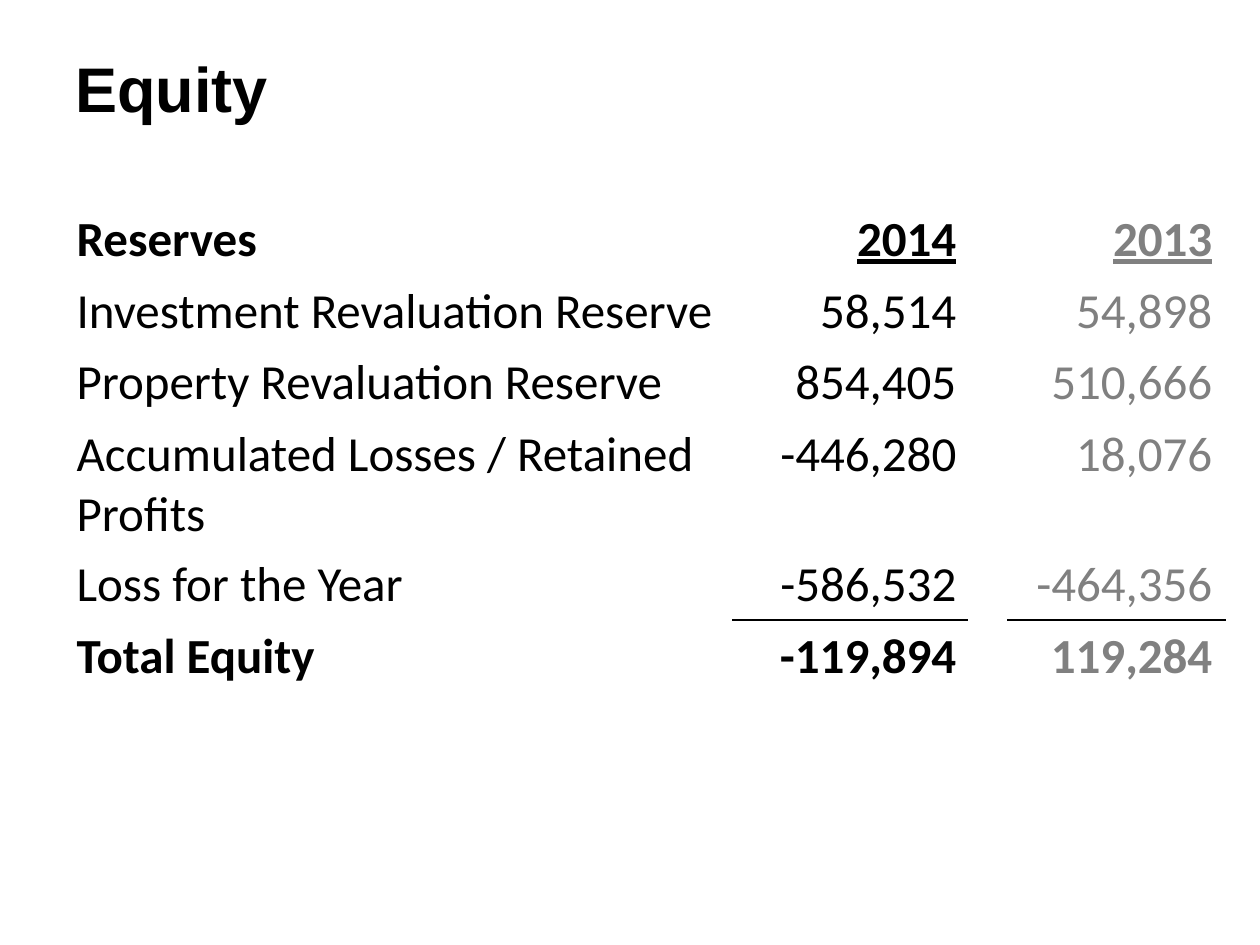
import pptx
import pptx.dml.color
import pptx.enum.text
import pptx.oxml
import pptx.oxml.ns
import pptx.util

PX = 914400 // 126
COLORS = {"ink": "000000", "muted": "808080"}
COLUMN_WIDTHS = [669, 236, 39, 217]
ROW_HEIGHT = 66
ROWS = [
    ("Reserves", "2014", "2013"),
    ("Investment Revaluation Reserve", "58,514", "54,898"),
    ("Property Revaluation Reserve", "854,405", "510,666"),
    ("Accumulated Losses / Retained Profits", "-446,280", "18,076"),
    ("Loss for the Year", "-586,532", "-464,356"),
    ("Total Equity", "-119,894", "119,284"),
]


def to_emu(*lengths):
    return [pptx.util.Emu(length * PX) for length in lengths]


def style_font(font, name, size, color, bold=False, underline=False):
    font.name = name
    font.size = pptx.util.Pt(size)
    font.bold = bold
    font.underline = underline
    font.color.rgb = pptx.dml.color.RGBColor.from_string(COLORS[color])


def add_border(cell, side):
    namespace = pptx.oxml.ns.nsdecls("a")
    border = pptx.oxml.parse_xml(
        f'<a:ln{side} {namespace} w="{pptx.util.Pt(1)}"><a:solidFill>'
        f'<a:srgbClr val="{COLORS["ink"]}"/></a:solidFill></a:ln{side}>'
    )
    cell._tc.get_or_add_tcPr().insert(0, border)


def add_title(slide, left, top, width, height):
    text_frame = slide.shapes.add_textbox(*to_emu(left, top, width, height)).text_frame
    text_frame.word_wrap = True
    text_frame.vertical_anchor = pptx.enum.text.MSO_ANCHOR.MIDDLE
    text_frame.text = "Equity"
    style_font(text_frame.paragraphs[0].runs[0].font, "Arial", 36, "ink", bold=True)


def fill_cell(cell, text, color, align_right, bold, underline):
    cell.text = text
    paragraph = cell.text_frame.paragraphs[0]
    if align_right:
        paragraph.alignment = pptx.enum.text.PP_ALIGN.RIGHT
    style_font(paragraph.runs[0].font, "Calibri", 28, color, bold, underline)


def add_reserves_table(slide, left, top):
    box = to_emu(left, top, sum(COLUMN_WIDTHS), ROW_HEIGHT * len(ROWS))
    table = slide.shapes.add_table(len(ROWS), len(COLUMN_WIDTHS), *box).table
    table.first_row = False
    table.horz_banding = False
    for column, width in zip(table.columns, to_emu(*COLUMN_WIDTHS)):
        column.width = width
    for cell in table.iter_cells():
        cell.fill.background()

    total_row = len(ROWS) - 1
    for row, (label, current, previous) in enumerate(ROWS):
        bold = row in (0, total_row)
        fill_cell(table.cell(row, 0), label, "ink", False, bold, False)
        for column, value, color in ((1, current, "ink"), (3, previous, "muted")):
            fill_cell(table.cell(row, column), value, color, True, bold, row == 0)
    for column in (1, 3):
        add_border(table.cell(total_row - 1, column), "B")
        add_border(table.cell(total_row, column), "T")


def main():
    presentation = pptx.Presentation()
    presentation.slide_width, presentation.slide_height = to_emu(1260, 945)
    slide = presentation.slides.add_slide(presentation.slide_layouts[6])
    add_title(slide, 63, 37, 1197, 100)
    add_reserves_table(slide, 64, 204)
    presentation.save("out.pptx")


if __name__ == "__main__":
    main()
